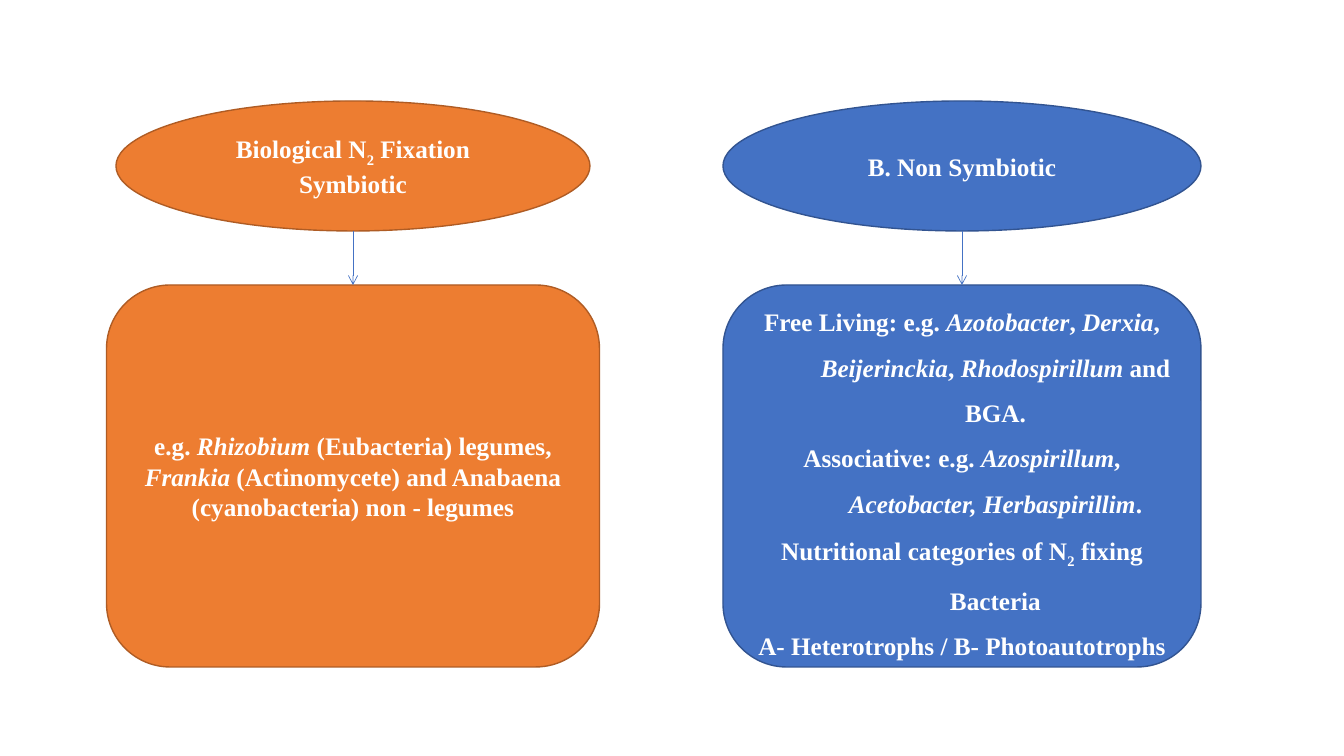
from dataclasses import dataclass
from lxml import etree
from pptx import Presentation
from pptx.dml.color import RGBColor
from pptx.enum.shapes import MSO_CONNECTOR, MSO_SHAPE
from pptx.enum.text import MSO_ANCHOR, PP_ALIGN
from pptx.oxml.ns import qn
from pptx.util import Pt

OVAL = MSO_SHAPE.OVAL
ROUND = MSO_SHAPE.ROUNDED_RECTANGLE
LINE = MSO_CONNECTOR.STRAIGHT
CENTER = PP_ALIGN.CENTER
MIDDLE = MSO_ANCHOR.MIDDLE

PLAIN, ITAL, SUB = "plain", "italic", "sub"


@dataclass(frozen=True)
class Theme:
    orange: str = "ED7D31"
    rust: str = "AF5C24"
    blue: str = "4472C4"
    navy: str = "325491"
    white: str = "FFFFFF"
    font: str = "Times New Roman"
    size: int = 18
    edge: float = 1
    arrow: float = 0.5


THEME = Theme()

COLUMNS = [
    {
        "mid": 353, "oval": 474, "box": 493,
        "fill": THEME.orange, "edge": THEME.rust,
        "head": [
            [("Biological N", PLAIN), ("2", SUB), (" Fixation", PLAIN)],
            [("Symbiotic", PLAIN)],
        ],
        "head_hang": 67,
        "body": [
            [("e.g. ", PLAIN), ("Rhizobium", ITAL),
             (" (Eubacteria) legumes, ", PLAIN), ("Frankia", ITAL),
             (" (Actinomycete) and Anabaena (cyanobacteria) non - legumes", PLAIN)],
        ],
        "body_hang": 0, "space": 1.0,
    },
    {
        "mid": 962, "oval": 478, "box": 478,
        "fill": THEME.blue, "edge": THEME.navy,
        "head": [[("B. Non Symbiotic", PLAIN)]],
        "head_hang": 0,
        "body": [
            [("Free Living: e.g. ", PLAIN), ("Azotobacter", ITAL), (", ", PLAIN),
             ("Derxia", ITAL), (", ", PLAIN), ("Beijerinckia", ITAL), (", ", PLAIN),
             ("Rhodospirillum ", ITAL), ("and BGA.", PLAIN)],
            [("Associative: e.g. ", PLAIN), ("Azospirillum", ITAL), (", ", PLAIN),
             ("Acetobacter, Herbaspirillim", ITAL), (".", PLAIN)],
            [("Nutritional categories of N", PLAIN), ("2", SUB),
             (" fixing Bacteria", PLAIN)],
            [("A- Heterotrophs / B- Photoautotrophs", PLAIN)],
        ],
        "body_hang": 67, "space": 1.5,
    },
]

WIDE, HIGH = 1344, 756
OVAL_TOP, OVAL_HIGH = 101, 130
BOX_TOP, BOX_HIGH = 285, 382


def px(n):
    return round(n * 914400 / 100.8)


def rgb(code):
    return RGBColor.from_string(code)


def add_text(frame, paras, hang, space):
    frame.word_wrap = True
    frame.vertical_anchor = MIDDLE
    for i, runs in enumerate(paras):
        para = frame.add_paragraph() if i else frame.paragraphs[0]
        para.alignment = CENTER
        para.line_spacing = space
        if hang:
            props = para._p.get_or_add_pPr()
            props.set("marL", str(px(hang)))
            props.set("indent", str(-px(hang)))
        for text, style in runs:
            run = para.add_run()
            run.text = text
            font = run.font
            font.name = THEME.font
            font.size = Pt(THEME.size)
            font.bold = True
            font.italic = style == ITAL
            font.color.rgb = rgb(THEME.white)
            if style == SUB:
                font._element.set("baseline", "-25000")


def add_node(slide, kind, col, wide, top, high, paras, hang, space):
    left = col["mid"] - wide / 2
    node = slide.shapes.add_shape(kind, px(left), px(top), px(wide), px(high))
    node.shadow.inherit = False
    node.fill.solid()
    node.fill.fore_color.rgb = rgb(col["fill"])
    node.line.color.rgb = rgb(col["edge"])
    node.line.width = Pt(THEME.edge)
    add_text(node.text_frame, paras, hang, space)


def add_arrow(slide, mid, top, end):
    arrow = slide.shapes.add_connector(LINE, px(mid), px(top), px(mid), px(end))
    arrow.line.color.rgb = rgb(THEME.blue)
    arrow.line.width = Pt(THEME.arrow)
    etree.SubElement(arrow.line._get_or_add_ln(), qn("a:tailEnd"), type="arrow")
    etree.SubElement(arrow._element.spPr, qn("a:effectLst"))


def main():
    deck = Presentation()
    deck.slide_width, deck.slide_height = px(WIDE), px(HIGH)
    slide = deck.slides.add_slide(deck.slide_layouts[6])
    for col in COLUMNS:
        add_node(slide, OVAL, col, col["oval"], OVAL_TOP, OVAL_HIGH,
                 col["head"], col["head_hang"], 1.0)
        add_node(slide, ROUND, col, col["box"], BOX_TOP, BOX_HIGH,
                 col["body"], col["body_hang"], col["space"])
        add_arrow(slide, col["mid"], OVAL_TOP + OVAL_HIGH, BOX_TOP)
    deck.save("out.pptx")


if __name__ == "__main__":
    main()
